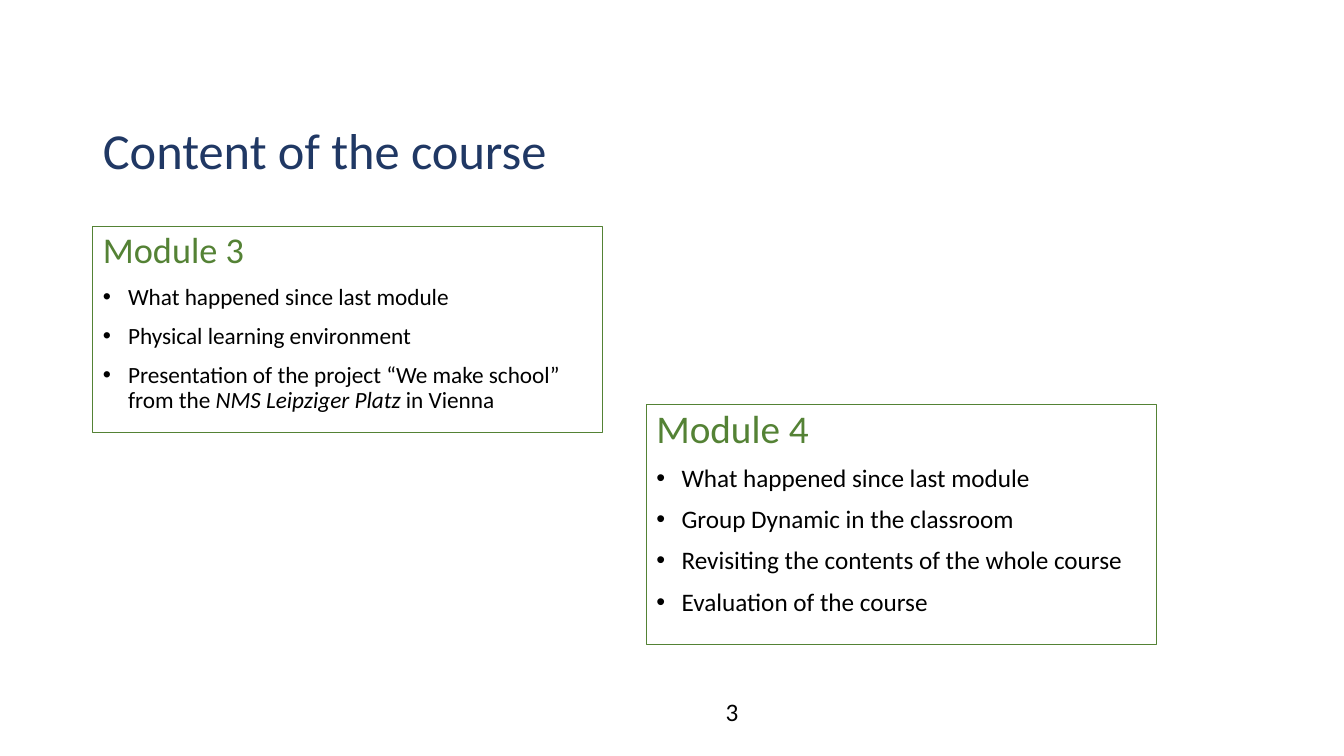
"""Build the course content slide with its two module boxes."""
import pptx
import pptx.util
import pptx.dml.color
import pptx.enum.text
import lxml.etree
from pptx.oxml.ns import qn

Inches, Pt = pptx.util.Inches, pptx.util.Pt
ANCHOR = pptx.enum.text.MSO_ANCHOR
ALIGN = pptx.enum.text.PP_ALIGN

NAVY = pptx.dml.color.RGBColor(0x20, 0x38, 0x64)
GREEN = pptx.dml.color.RGBColor(0x54, 0x82, 0x35)
BLACK = pptx.dml.color.RGBColor(0, 0, 0)
FONT = "Calibri"

TITLE = "Content of the course"
TITLE_BOX = (0.92, 1.2, 11.5, 0.97)
PAGE_NUMBER = "3"
PAGE_NUMBER_BOX = (5.76, 6.86, 3, 0.4)
MODULES = [
    {
        "heading": "Module 3",
        "box": (0.92, 2.25, 5.06, 2.04),
        "sizes": (25.9, 16.6),
        "topics": [
            [("What happened since last module", False)],
            [("Physical learning environment", False)],
            [
                ("Presentation of the project “We make school” from the ", False),
                ("NMS Leipziger Platz ", True),
                ("in Vienna", False),
            ],
        ],
    },
    {
        "heading": "Module 4",
        "box": (6.41, 4.01, 5.06, 2.38),
        "sizes": (28, 18),
        "topics": [
            [("What happened since last module", False)],
            [("Group Dynamic in the classroom", False)],
            [("Revisiting the contents of the whole course", False)],
            [("Evaluation of the course", False)],
        ],
    },
]


def place(shape, box, anchor):
    """Position a shape and prepare its text frame."""
    shape.left, shape.top, shape.width, shape.height = map(Inches, box)
    frame = shape.text_frame
    frame.word_wrap = True
    frame.auto_size = pptx.enum.text.MSO_AUTO_SIZE.NONE
    frame.vertical_anchor = anchor
    return frame


def add_run(paragraph, text, size, color, italic=False):
    """Append one formatted run."""
    run = paragraph.add_run()
    run.text = text
    font = run.font
    font.name, font.size, font.italic = FONT, Pt(size), italic
    font.color.rgb = color


def set_bullet(paragraph, character=None):
    """Give a paragraph a hanging bullet, or none at all."""
    properties = paragraph._p.get_or_add_pPr()
    indent = Inches(0.25) if character else 0
    properties.set("marL", str(indent))
    properties.set("indent", str(-indent))
    if character:
        typeface = lxml.etree.SubElement(properties, qn("a:buFont"))
        typeface.set("typeface", "Arial")
        lxml.etree.SubElement(properties, qn("a:buChar")).set("char", character)
    else:
        lxml.etree.SubElement(properties, qn("a:buNone"))


def fill_module(shape, module):
    """Write a module heading and its bulleted topics in an outlined box."""
    frame = place(shape, module["box"], ANCHOR.TOP)
    shape.line.color.rgb = GREEN
    shape.line.width = Pt(0.75)
    heading_size, topic_size = module["sizes"]
    heading = frame.paragraphs[0]
    set_bullet(heading)
    heading.line_spacing, heading.space_before = 0.9, Pt(0)
    add_run(heading, module["heading"], heading_size, GREEN)
    for topic in module["topics"]:
        paragraph = frame.add_paragraph()
        set_bullet(paragraph, "•")
        paragraph.line_spacing, paragraph.space_before = 0.9, Pt(10)
        for text, italic in topic:
            add_run(paragraph, text, topic_size, BLACK, italic)


def main():
    """Create and save the presentation."""
    presentation = pptx.Presentation()
    presentation.slide_width = Inches(13.33)
    presentation.slide_height = Inches(7.5)
    two_content = presentation.slide_layouts.get_by_name("Two Content")
    slide = presentation.slides.add_slide(two_content)

    title = place(slide.shapes.title, TITLE_BOX, ANCHOR.TOP).paragraphs[0]
    title.alignment, title.line_spacing = ALIGN.LEFT, 0.9
    add_run(title, TITLE, 36, NAVY)

    for index, module in enumerate(MODULES, start=1):
        fill_module(slide.placeholders[index], module)

    number_box = slide.shapes.add_textbox(*map(Inches, PAGE_NUMBER_BOX))
    number = place(number_box, PAGE_NUMBER_BOX, ANCHOR.MIDDLE).paragraphs[0]
    number.alignment = ALIGN.CENTER
    add_run(number, PAGE_NUMBER, 18, BLACK)

    presentation.save("out.pptx")


if __name__ == "__main__":
    main()
